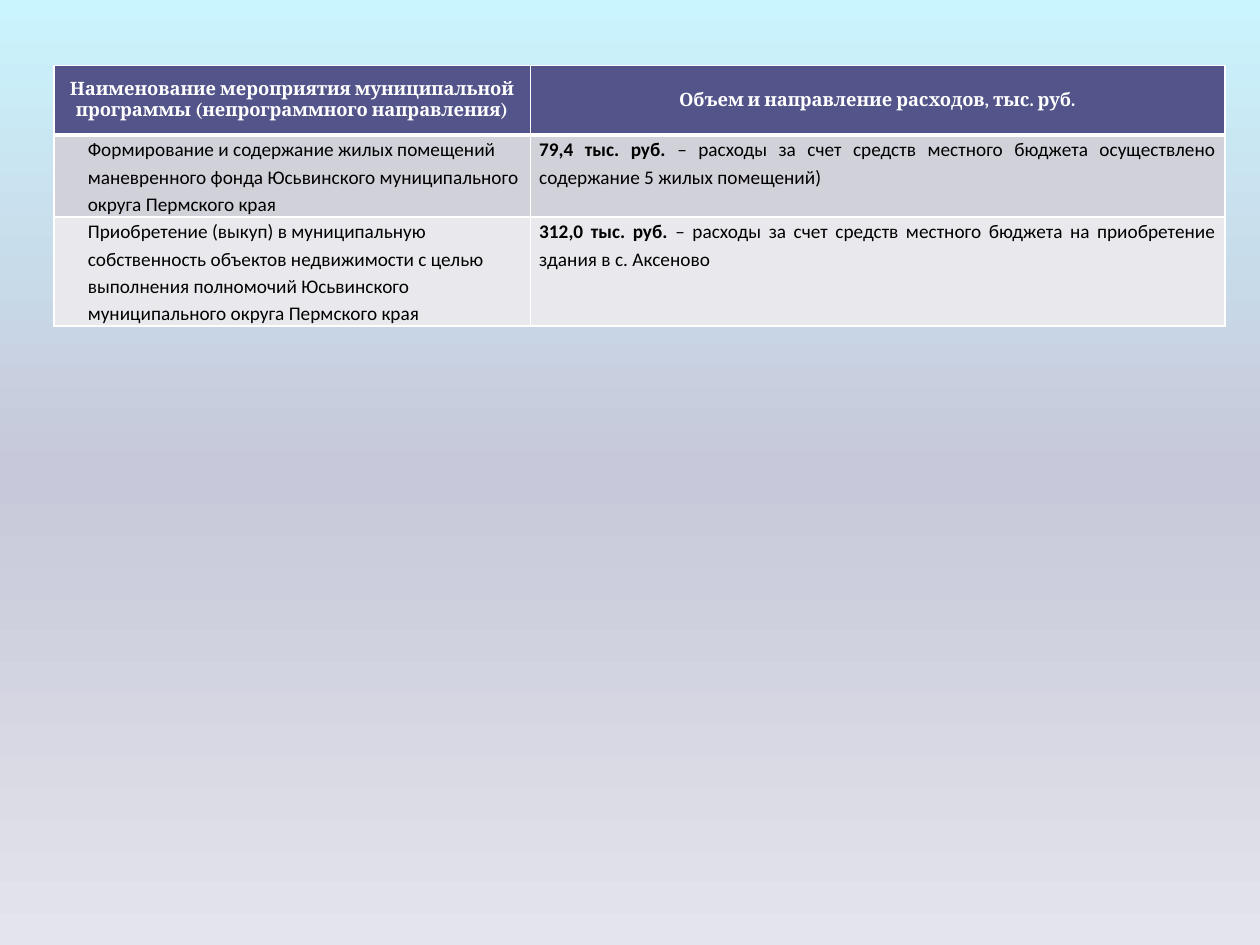
import copy
import dataclasses

import lxml.etree
import pptx
import pptx.dml.color
import pptx.enum.text
import pptx.oxml.ns
import pptx.util

Cm = pptx.util.Cm
Pt = pptx.util.Pt
RGBColor = pptx.dml.color.RGBColor
ALIGN = pptx.enum.text.PP_ALIGN
ANCHOR = pptx.enum.text.MSO_ANCHOR
qn = pptx.oxml.ns.qn


@dataclasses.dataclass(frozen=True)
class Theme:
    background: tuple = ((0, "CAF4FE"), (0.5, "C7C8D9"), (1, "E4E4EC"))
    header_fill: str = "53548A"
    row_fills: tuple = ("D1D1DA", "E9E9ED")
    border: str = "FFFFFF"
    header_text: str = "FFFFFF"
    body_text: str = "000000"
    header_font: str = "Cambria"
    body_font: str = "Calibri"
    header_size: float = 10.5
    body_size: float = 11
    thin_line: float = 1
    thick_line: float = 3


def set_attributes(target, values):
    for name, value in values.items():
        setattr(target, name, value)


class SlideBuilder:
    """Holds the theme and the slide being filled."""

    def __init__(self, presentation, theme):
        self.theme = theme
        self.slide = presentation.slides.add_slide(presentation.slide_layouts[6])

    def add_background(self):
        fill = self.slide.background.fill
        fill.gradient()
        fill.gradient_angle = 270
        stop_list = self.slide.element.find(".//" + qn("a:gsLst"))
        stop_list.append(copy.deepcopy(stop_list[0]))
        for stop, (position, color) in zip(fill.gradient_stops, self.theme.background):
            stop.position = position
            stop.color.rgb = RGBColor.from_string(color)

    def add_table(self, left, top, widths, heights, header, rows):
        frame = self.slide.shapes.add_table(
            len(heights), len(widths), left, top, sum(widths), sum(heights))
        table = frame.table
        table.horz_banding = False
        for column, width in zip(table.columns, widths):
            column.width = width
        for row, height in zip(table.rows, heights):
            row.height = height
        for index, text in enumerate(header):
            self.fill_header_cell(table.cell(0, index), text)
        for index, (activity, amount, purpose) in enumerate(rows):
            fill = self.theme.row_fills[index % 2]
            activity_cell, expense_cell = table.rows[index + 1].cells
            top_line = self.theme.thick_line if index == 0 else self.theme.thin_line
            self.fill_body_cell(activity_cell, [(activity, False)], fill, top_line, ALIGN.LEFT)
            self.set_indent(activity_cell, Cm(0.5))
            self.fill_body_cell(expense_cell, [(amount, True), (purpose, False)],
                                fill, top_line, ALIGN.JUSTIFY)

    def fill_header_cell(self, cell, text):
        theme = self.theme
        cell.vertical_anchor = ANCHOR.MIDDLE
        self.style_cell(cell, theme.header_fill, B=theme.thick_line)
        font = {"name": theme.header_font, "size": Pt(theme.header_size)}
        self.add_text(cell, [(text, True)], font, theme.header_text,
                      {"alignment": ALIGN.CENTER})

    def fill_body_cell(self, cell, parts, fill, top_line, alignment):
        theme = self.theme
        set_attributes(cell, {"margin_left": Cm(0.18), "margin_right": Cm(0.18),
                              "margin_top": 0, "margin_bottom": 0})
        self.style_cell(cell, fill, T=top_line)
        font = {"name": theme.body_font, "size": Pt(theme.body_size)}
        self.add_text(cell, parts, font, theme.body_text,
                      {"alignment": alignment, "line_spacing": 1.15})

    def add_text(self, cell, parts, font, color, paragraph_format):
        """Add (text, bold) parts as runs of the cell's one paragraph."""
        paragraph = cell.text_frame.paragraphs[0]
        set_attributes(paragraph, paragraph_format)
        for text, bold in parts:
            run = paragraph.add_run()
            run.text = text
            set_attributes(run.font, {**font, "bold": bold})
            run.font.color.rgb = RGBColor.from_string(color)

    def set_indent(self, cell, indent):
        properties = cell.text_frame.paragraphs[0]._p.get_or_add_pPr()
        properties.set("marL", str(indent))
        properties.set("indent", "0")

    def style_cell(self, cell, fill, **line_widths):
        """Fill and frame a cell; L, R, T or B overrides the thin line of that side."""
        cell.fill.solid()
        cell.fill.fore_color.rgb = RGBColor.from_string(fill)
        properties = cell._tc.get_or_add_tcPr()
        for position, side in enumerate("LRTB"):
            line = lxml.etree.Element(qn("a:ln" + side))
            line.set("w", str(Pt(line_widths.get(side, self.theme.thin_line))))
            solid = lxml.etree.SubElement(line, qn("a:solidFill"))
            lxml.etree.SubElement(solid, qn("a:srgbClr")).set("val", self.theme.border)
            properties.insert(position, line)


HEADER = (
    "Наименование мероприятия муниципальной программы (непрограммного направления)",
    "Объем и направление расходов, тыс. руб.",
)
EXPENSES = (
    ("Формирование и содержание жилых помещений маневренного фонда "
     "Юсьвинского муниципального округа Пермского края",
     "79,4 тыс. руб. ",
     "– расходы за счет средств местного бюджета осуществлено содержание 5 жилых помещений)"),
    ("Приобретение (выкуп) в муниципальную собственность объектов недвижимости "
     "с целью выполнения полномочий Юсьвинского муниципального округа Пермского края",
     "312,0 тыс. руб. ",
     "– расходы за счет средств местного бюджета на приобретение здания в с. Аксеново"),
)


def main():
    presentation = pptx.Presentation()
    set_attributes(presentation, {"slide_width": Cm(25.4), "slide_height": Cm(19.05)})
    builder = SlideBuilder(presentation, Theme())
    builder.add_background()
    builder.add_table(Cm(1.09), Cm(1.32), (Cm(9.6), Cm(14)),
                      (Cm(1.4), Cm(1.65), Cm(2.19)), HEADER, EXPENSES)
    presentation.save("out.pptx")


if __name__ == "__main__":
    main()
